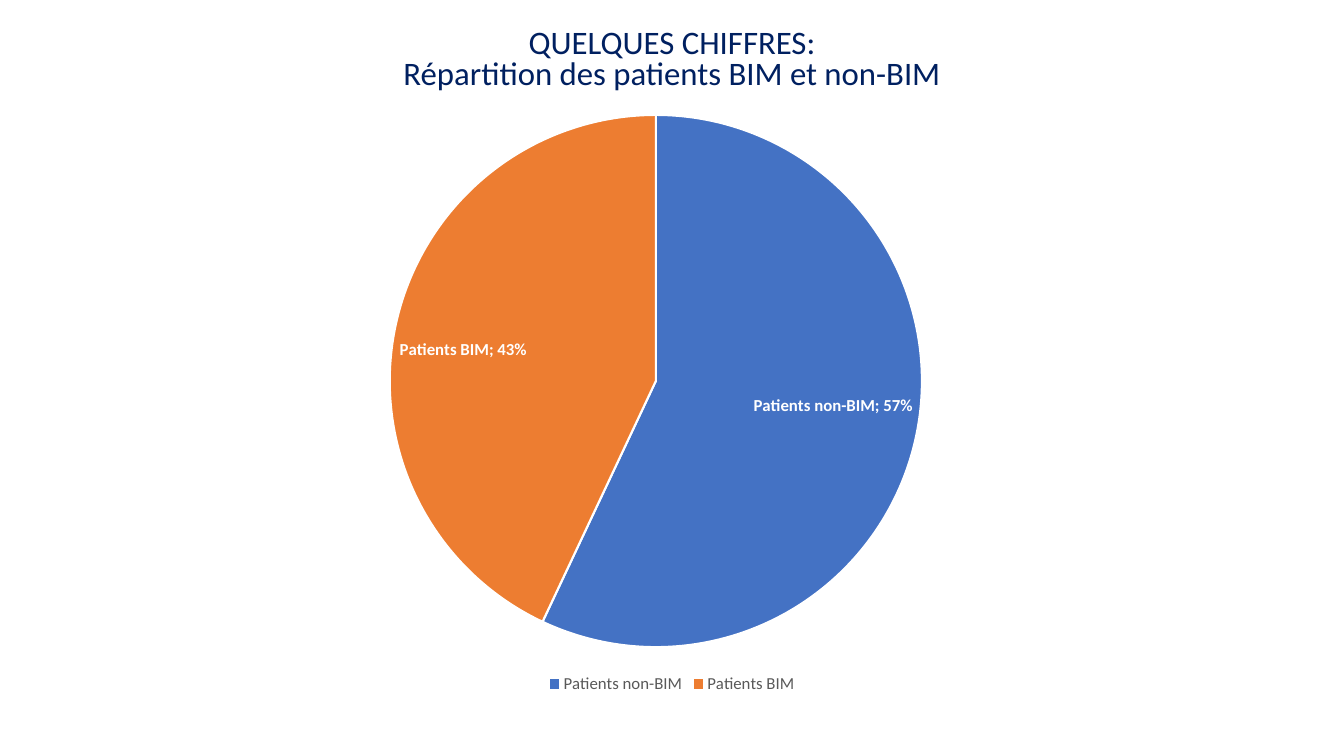
from pptx import Presentation
from pptx.chart.data import CategoryChartData
from pptx.dml.color import RGBColor
from pptx.enum.chart import XL_CHART_TYPE, XL_LABEL_POSITION, XL_LEGEND_POSITION
from pptx.enum.text import MSO_ANCHOR, MSO_AUTO_SIZE, PP_ALIGN
from pptx.oxml import parse_xml
from pptx.oxml.ns import nsdecls
from pptx.util import Emu, Pt

PIE = XL_CHART_TYPE.PIE
BEST_FIT = XL_LABEL_POSITION.BEST_FIT
BOTTOM = XL_LEGEND_POSITION.BOTTOM
MIDDLE = MSO_ANCHOR.MIDDLE
NO_AUTOFIT = MSO_AUTO_SIZE.NONE
CENTER = PP_ALIGN.CENTER

NAVY = RGBColor(0x00, 0x20, 0x60)
BLUE = RGBColor(0x44, 0x72, 0xC4)
ORANGE = RGBColor(0xED, 0x7D, 0x31)
GREY = RGBColor(0x59, 0x59, 0x59)
WHITE = RGBColor(0xFF, 0xFF, 0xFF)

FONT = "Calibri"
SLIDE_W, SLIDE_H = 1344, 756
EMU_PER_PX = 12192000 / SLIDE_W

TITLE_BOX = (0, 21, SLIDE_W, 79)
CHART_BOX = (224, 100, 896, 598)
PIE_BOX = (166, 15, 532, 532)  # relative to the chart
TITLE_LINES = ["QUELQUES CHIFFRES:", "Répartition des patients BIM et non-BIM"]
SHARES = [("Patients non-BIM", 0.57, BLUE), ("Patients BIM", 0.43, ORANGE)]


def px(n):
    return Emu(round(n * EMU_PER_PX))


def set_font(font, size, color, bold=False):
    font.name = FONT
    font.size = Pt(size)
    font.bold = bold
    font.color.rgb = color


def add_title(slide, box):
    sp = slide.shapes.title
    sp.left, sp.top, sp.width, sp.height = map(px, box)
    tf = sp.text_frame
    tf.word_wrap = True
    tf.auto_size = NO_AUTOFIT
    tf.vertical_anchor = MIDDLE
    for i, line in enumerate(TITLE_LINES):
        p = tf.add_paragraph() if i else tf.paragraphs[0]
        p.alignment = CENTER
        p.line_spacing = 0.8
        p.space_before = Pt(0)
        r = p.add_run()
        r.text = line
        set_font(r.font, 23.4, NAVY)


def place_pie(chart, box, pie):
    """Fix the plot area at the pie box, as fractions of the chart box."""
    x, y, w, h = pie
    fractions = {"x": x / box[2], "y": y / box[3], "w": w / box[2], "h": h / box[3]}
    sizes = "".join(f'<c:{k} val="{v:.3f}"/>' for k, v in fractions.items())
    layout = parse_xml(
        f'<c:layout {nsdecls("c")}><c:manualLayout><c:layoutTarget val="inner"/>'
        f'<c:xMode val="edge"/><c:yMode val="edge"/>{sizes}'
        "</c:manualLayout></c:layout>"
    )
    plot_area = chart.plots[0]._element.getparent()
    for old in plot_area.findall(layout.tag):
        plot_area.remove(old)
    plot_area.insert(0, layout)


def add_pie(slide, box):
    data = CategoryChartData(number_format="0%")
    data.categories = [name for name, _, _ in SHARES]
    data.add_series("Patients", [value for _, value, _ in SHARES])
    chart = slide.shapes.add_chart(PIE, *map(px, box), data).chart
    chart.has_title = False
    chart.font.name = FONT
    chart.font.size = Pt(10)
    place_pie(chart, box, PIE_BOX)

    # Slices
    plot = chart.plots[0]
    plot.vary_by_categories = True
    for i, (_, _, color) in enumerate(SHARES):
        fmt = plot.series[0].points[i].format
        fmt.fill.solid()
        fmt.fill.fore_color.rgb = color
        fmt.line.color.rgb = WHITE
        fmt.line.width = Pt(1.5)

    # Labels
    labels = plot.series[0].data_labels
    labels.show_value = True
    labels.show_category_name = True
    labels.show_percentage = False
    labels.show_legend_key = False
    labels.number_format = "0%"
    labels.number_format_is_linked = False
    labels.position = BEST_FIT
    set_font(labels.font, 12, WHITE, bold=True)

    # Legend
    chart.has_legend = True
    chart.legend.position = BOTTOM
    chart.legend.include_in_layout = False
    set_font(chart.legend.font, 12, GREY)


def main():
    prs = Presentation()
    prs.slide_width, prs.slide_height = px(SLIDE_W), px(SLIDE_H)
    slide = prs.slides.add_slide(prs.slide_layouts[5])
    add_title(slide, TITLE_BOX)
    add_pie(slide, CHART_BOX)
    prs.save("out.pptx")


if __name__ == "__main__":
    main()
